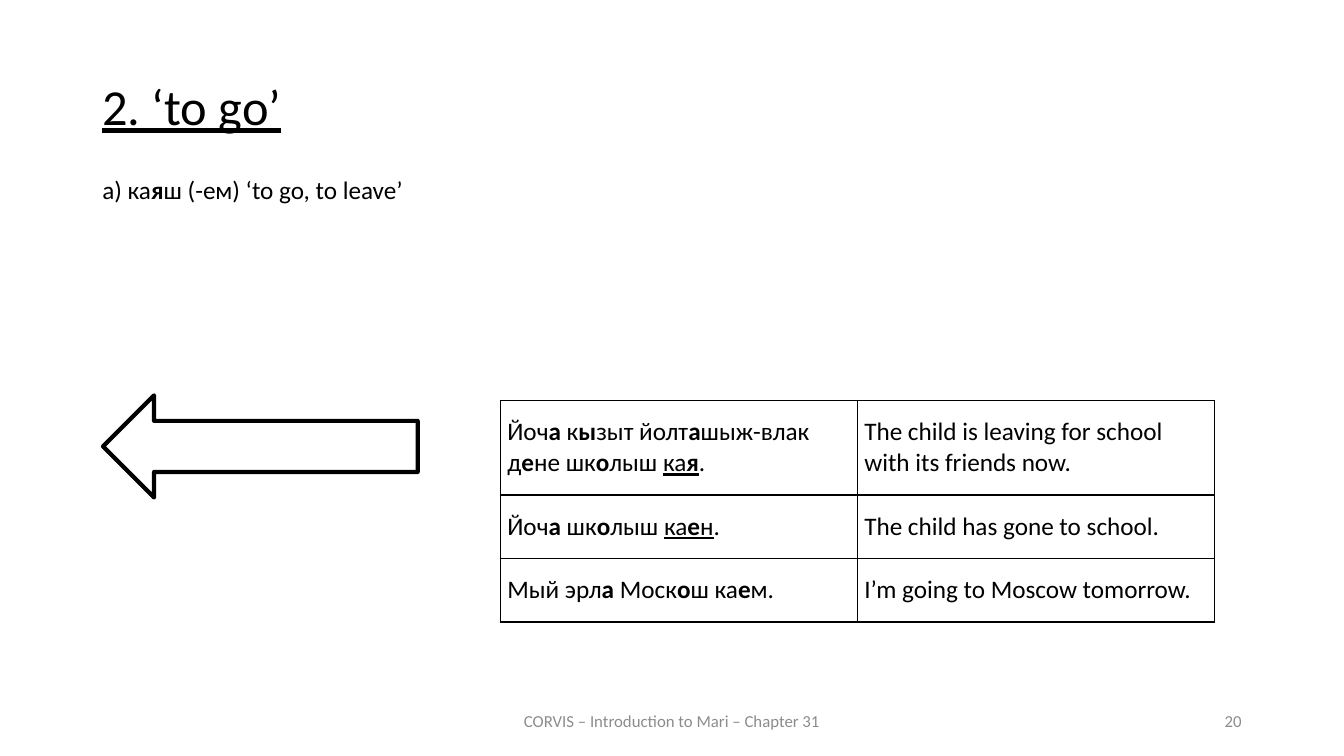
from dataclasses import dataclass

from pptx import Presentation
from pptx import util as u
from pptx.dml.color import RGBColor
from pptx.enum import shapes, text
from pptx.oxml import xmlchemy as x
from pptx.oxml import ns
from lxml import etree

FONT = "Calibri"
BLACK = "000000"
GREY = "8C8C8C"


@dataclass(frozen=True)
class Run:
    text: str
    bold: bool = False
    underline: bool = False


@dataclass(frozen=True)
class Label:
    left: float
    top: float
    width: float
    height: float
    runs: tuple[Run, ...]
    size: float = 18
    color: str = BLACK
    align: text.PP_ALIGN = text.PP_ALIGN.LEFT
    anchor: text.MSO_ANCHOR = text.MSO_ANCHOR.TOP
    line_spacing: float = 1.0
    space_before: float = 0


@dataclass(frozen=True)
class Example:
    height: float
    mari: tuple[Run, ...]
    english: str


LABELS = (
    Label(66, 54.7, 828, 59.8, (Run("2. ‘to go’", underline=True),), size=36,
          align=text.PP_ALIGN.JUSTIFY, line_spacing=0.9, space_before=12),
    Label(318, 500.5, 324, 28.8, (Run("CORVIS – Introduction to Mari – Chapter 31"),),
          size=12, color=GREY, align=text.PP_ALIGN.CENTER, anchor=text.MSO_ANCHOR.MIDDLE),
    Label(678, 500.5, 216, 28.8, (Run("20"),),
          size=12, color=GREY, align=text.PP_ALIGN.RIGHT, anchor=text.MSO_ANCHOR.MIDDLE),
    Label(66, 121, 372, 28.8,
          (Run("a) ка"), Run("я", bold=True), Run("ш (-ем) ‘to go, to leave’"))),
)

EXAMPLES = (
    Example(67.6, (
        Run("Йоч"), Run("а", bold=True), Run(" к"), Run("ы", bold=True),
        Run("зыт йолт"), Run("а", bold=True), Run("шыж-влак д"), Run("е", bold=True),
        Run("не шк"), Run("о", bold=True), Run("лыш "), Run("ка", underline=True),
        Run("я", bold=True, underline=True), Run("."),
    ), "The child is leaving for school with its friends now."),
    Example(45.4, (
        Run("Йоч"), Run("а", bold=True), Run(" шк"), Run("о", bold=True), Run("лыш "),
        Run("ка", underline=True), Run("е", bold=True, underline=True),
        Run("н", underline=True), Run("."),
    ), "The child has gone to school."),
    Example(45.4, (
        Run("Мый эрл"), Run("а", bold=True), Run(" Моск"), Run("о", bold=True),
        Run("ш ка"), Run("е", bold=True), Run("м."),
    ), "I’m going to Moscow tomorrow."),
)


def rgb(value: str) -> RGBColor:
    return RGBColor.from_string(value)


def add_runs(p, runs: tuple[Run, ...], size: float = 18, color: str = BLACK) -> None:
    for run in runs:
        r = p.add_run()
        r.text = run.text
        r.font.name = FONT
        r.font.size = u.Pt(size)
        r.font.bold = run.bold
        r.font.underline = run.underline
        r.font.color.rgb = rgb(color)


def add_label(s, label: Label) -> None:
    sp = s.shapes.add_textbox(u.Pt(label.left), u.Pt(label.top),
                              u.Pt(label.width), u.Pt(label.height))
    tf = sp.text_frame
    tf.word_wrap = True
    tf.vertical_anchor = label.anchor
    p = tf.paragraphs[0]
    p.alignment = label.align
    p.line_spacing = label.line_spacing
    p.space_before = u.Pt(label.space_before)
    add_runs(p, label.runs, label.size, label.color)


def add_borders(cell, color: str, width: float) -> None:
    tcPr = cell._tc.get_or_add_tcPr()
    for side in ("a:lnL", "a:lnR", "a:lnT", "a:lnB"):
        ln = etree.SubElement(tcPr, ns.qn(side), w=str(u.Pt(width)))
        fill = etree.SubElement(ln, ns.qn("a:solidFill"))
        etree.SubElement(fill, ns.qn("a:srgbClr"), val=color)


def fill_cell(cell, runs: tuple[Run, ...]) -> None:
    cell.margin_left = cell.margin_right = u.Pt(5)
    cell.margin_top = cell.margin_bottom = 0
    cell.vertical_anchor = text.MSO_ANCHOR.MIDDLE
    add_runs(cell.text_frame.paragraphs[0], runs)
    add_borders(cell, BLACK, 1)
    cell.fill.background()


def add_examples(s, examples: tuple[Example, ...]) -> None:
    height = sum(example.height for example in examples)
    table = s.shapes.add_table(len(examples), 2, u.Pt(357.4), u.Pt(286),
                               u.Pt(510), u.Pt(height)).table
    table.first_row = False
    table.horz_banding = False
    for row, example in enumerate(examples):
        table.rows[row].height = u.Pt(example.height)
        fill_cell(table.cell(row, 0), example.mari)
        fill_cell(table.cell(row, 1), (Run(example.english),))


def add_arrow(s) -> None:
    sp = s.shapes.add_shape(shapes.MSO_SHAPE.LEFT_ARROW, u.Pt(73.6), u.Pt(282.4),
                            u.Pt(224.8), u.Pt(73))
    sp.shadow.inherit = False
    sp.fill.background()
    sp.line.color.rgb = rgb(BLACK)
    sp.line.width = u.Pt(3)


def main() -> None:
    prs = Presentation()
    prs.slide_width, prs.slide_height = u.Pt(960), u.Pt(540)
    s = prs.slides.add_slide(prs.slide_layouts[6])
    for label in LABELS:
        add_label(s, label)
    add_examples(s, EXAMPLES)
    add_arrow(s)
    prs.save("out.pptx")


if __name__ == "__main__":
    main()
